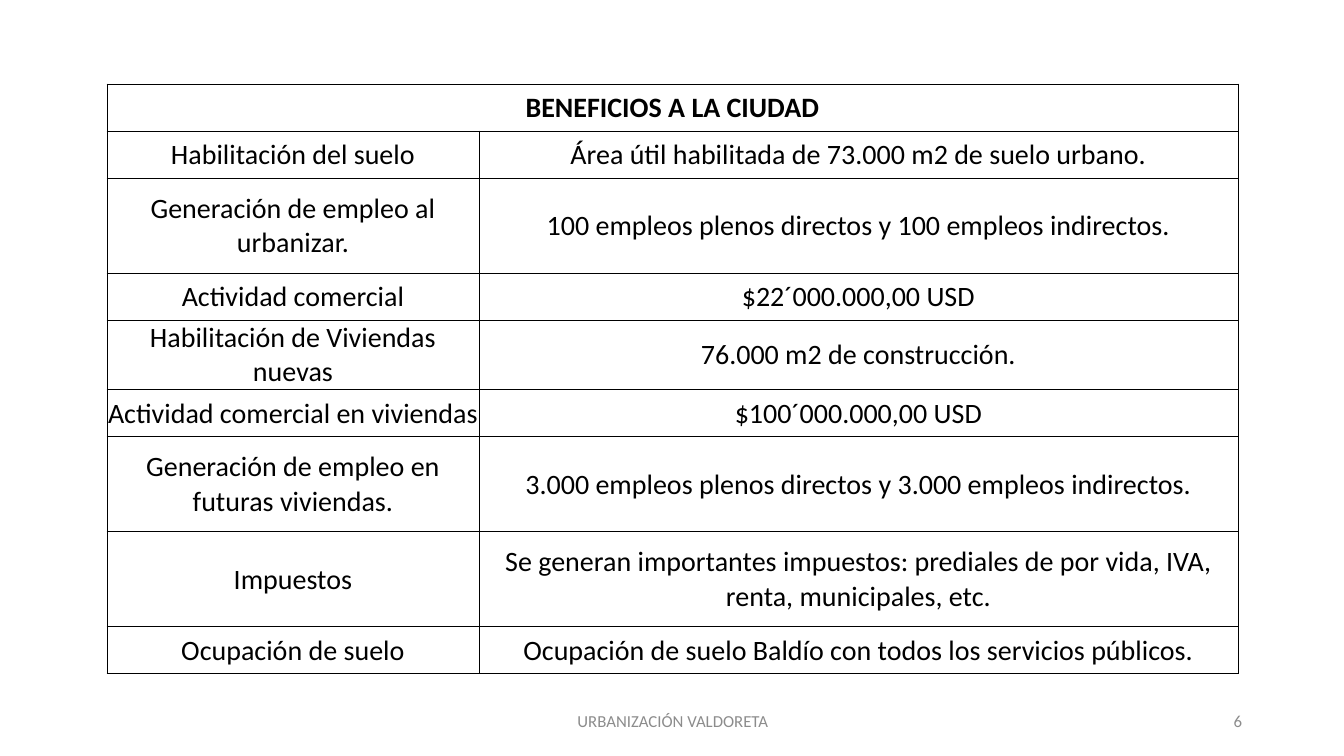
"""Build a slide with a table of the benefits a housing development brings to the city."""
from lxml import etree
from pptx import Presentation
from pptx import util as u
from pptx.dml.color import RGBColor
from pptx.enum import text
from pptx.oxml import ns

PX = 914400 / 100.8
COLORS = {"ink": "000000", "paper": "FFFFFF", "footer": "8C8C8C"}
FONT = "Calibri"
TITLE = "BENEFICIOS A LA CIUDAD"
BENEFITS = [
    ("Habilitación del suelo", "Área útil habilitada de 73.000 m2 de suelo urbano.", 47),
    ("Generación de empleo al urbanizar.", "100 empleos plenos directos y 100 empleos indirectos.", 95),
    ("Actividad comercial", "$22´000.000,00 USD", 47),
    ("Habilitación de Viviendas nuevas", "76.000 m2 de construcción.", 69),
    ("Actividad comercial en viviendas", "$100´000.000,00 USD", 47),
    ("Generación de empleo en futuras viviendas.", "3.000 empleos plenos directos y 3.000 empleos indirectos.", 95),
    ("Impuestos", "Se generan importantes impuestos: prediales de por vida, IVA, renta, municipales, etc.", 95),
    ("Ocupación de suelo", "Ocupación de suelo Baldío con todos los servicios públicos.", 47),
]
TITLE_HEIGHT = 47
COLUMN_WIDTHS = (372, 759)
FOOTERS = [
    ("URBANIZACIÓN VALDORETA", 446, 454, text.PP_ALIGN.CENTER),
    ("6", 950, 302, text.PP_ALIGN.RIGHT),
]


def px(length):
    """Turn pixels into EMU."""
    return u.Emu(round(length * PX))


def style_text(frame, size, color, align, bold=False):
    """Format every run of a text frame."""
    for para in frame.paragraphs:
        para.alignment = align
        for span in para.runs:
            span.font.name = FONT
            span.font.size = u.Pt(size)
            span.font.bold = bold
            span.font.color.rgb = RGBColor.from_string(COLORS[color])


deck = Presentation()
deck.slide_width, deck.slide_height = px(1344), px(756)
page = deck.slides.add_slide(deck.slide_layouts[6])

heights = [TITLE_HEIGHT] + [height for _, _, height in BENEFITS]
table = page.shapes.add_table(
    len(heights), len(COLUMN_WIDTHS), px(107), px(84), px(sum(COLUMN_WIDTHS)), px(sum(heights))
).table
table.first_row = False
table.horz_banding = False
for column, width in zip(table.columns, COLUMN_WIDTHS):
    column.width = px(width)
for row, height in zip(table.rows, heights):
    row.height = px(height)

table.cell(0, 0).merge(table.cell(0, 1))
table.cell(0, 0).text_frame.text = TITLE
for index, (benefit, detail, _) in enumerate(BENEFITS, start=1):
    table.cell(index, 0).text_frame.text = benefit
    table.cell(index, 1).text_frame.text = detail

for index, row in enumerate(table.rows):
    for cell in row.cells:
        cell.vertical_anchor = text.MSO_ANCHOR.MIDDLE
        cell.margin_left = cell.margin_right = cell.margin_top = px(1)
        cell.margin_bottom = 0
        cell.fill.solid()
        cell.fill.fore_color.rgb = RGBColor.from_string(COLORS["paper"])
        style_text(cell.text_frame, 20, "ink", text.PP_ALIGN.CENTER, bold=index == 0)
        properties = cell._tc.get_or_add_tcPr()
        for order, side in enumerate(("lnL", "lnR", "lnT", "lnB")):
            border = etree.Element(ns.qn(f"a:{side}"), w=str(u.Pt(0.5)))
            fill = etree.SubElement(border, ns.qn("a:solidFill"))
            etree.SubElement(fill, ns.qn("a:srgbClr"), val=COLORS["ink"])
            properties.insert(order, border)

for words, left, width, align in FOOTERS:
    box = page.shapes.add_textbox(px(left), px(701), px(width), px(40))
    box.text_frame.word_wrap = True
    box.text_frame.vertical_anchor = text.MSO_ANCHOR.MIDDLE
    box.text_frame.text = words
    style_text(box.text_frame, 12, "footer", align)

deck.save("out.pptx")
